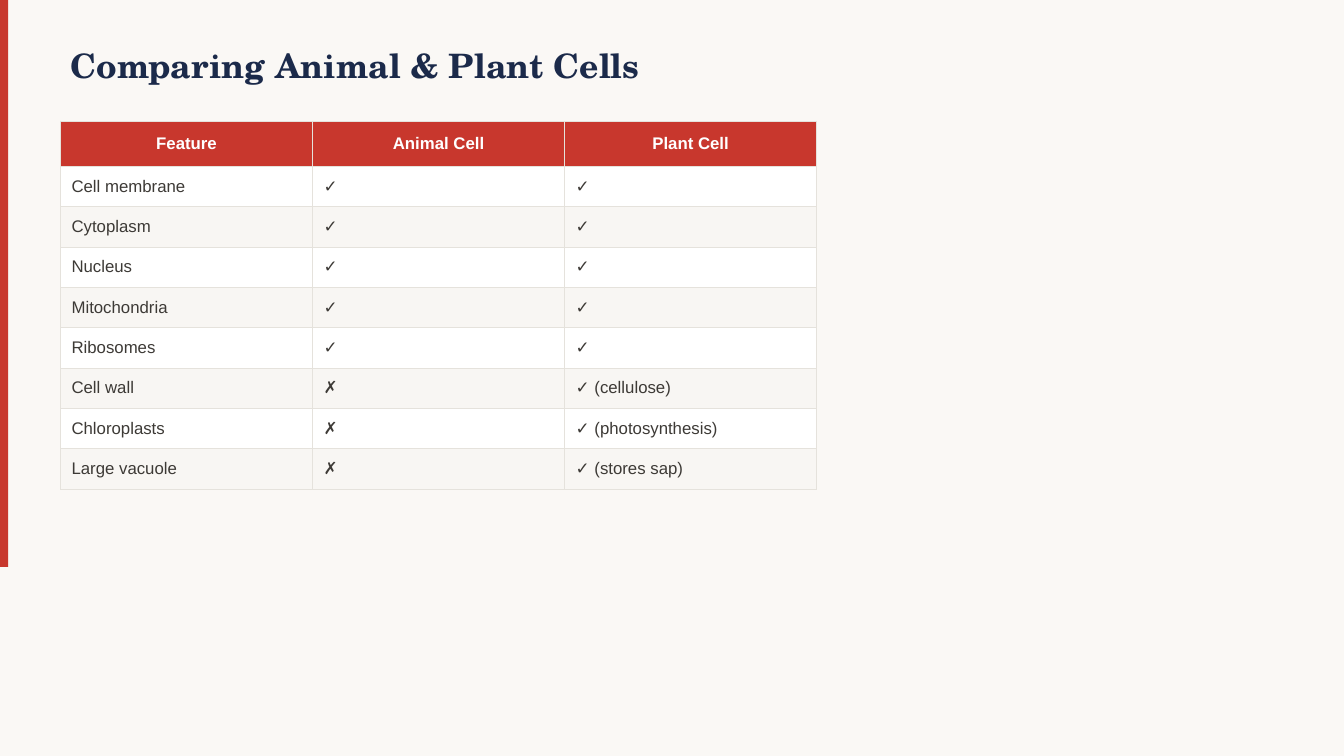
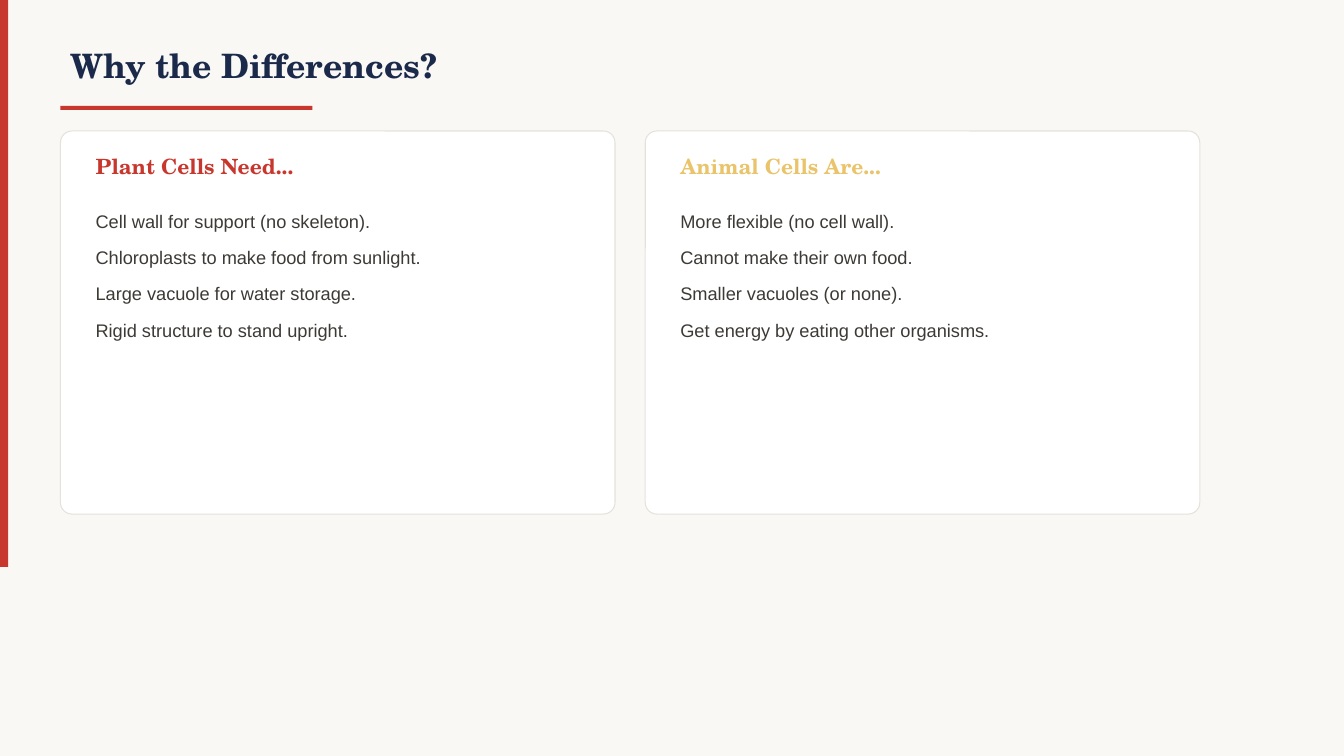
"""Build two slides that compare animal and plant cells."""
from lxml.etree import SubElement
from pptx import Presentation
from pptx.dml.color import RGBColor
from pptx.enum.shapes import MSO_SHAPE
from pptx.enum.text import MSO_ANCHOR, PP_ALIGN
from pptx.oxml.ns import qn
from pptx.util import Inches, Pt

PAPER, RED, NAVY, GOLD = "FAF8F5", "C8372D", "1B2A4A", "E9C46A"
WHITE, STRIPE, BORDER, INK = "FFFFFF", "F8F6F3", "E5E2DC", "3D3A36"
SERIF, SANS = "TeX Gyre Schola", "Arial"
UNIT = Inches(0.05)
MARGIN = 12 * UNIT


def rgb(code):
    return RGBColor.from_string(code)


def write(frame, *lines, size, color=INK, font=SANS, bold=False,
          align=PP_ALIGN.LEFT, anchor=MSO_ANCHOR.MIDDLE, spacing=None, after=None):
    frame.word_wrap = True
    frame.vertical_anchor = anchor
    for index, line in enumerate(lines):
        paragraph = frame.add_paragraph() if index else frame.paragraphs[0]
        paragraph.alignment = align
        paragraph.line_spacing = spacing
        paragraph.space_after = after
        run = paragraph.add_run()
        run.text = line
        run.font.size, run.font.name, run.font.bold = Pt(size), font, bold
        run.font.color.rgb = rgb(color)


deck = Presentation()
deck.slide_width, deck.slide_height = Inches(13.33), Inches(7.5)

slides = []
for title in ("Comparing Animal & Plant Cells", "Why the Differences?"):
    slide = deck.slides.add_slide(deck.slide_layouts[6])
    slide.background.fill.solid()
    slide.background.fill.fore_color.rgb = rgb(PAPER)
    band = slide.shapes.add_shape(MSO_SHAPE.RECTANGLE, 0, 0, Inches(0.08),
                                  int(deck.slide_height * 0.75))
    band.shadow.inherit = False
    band.fill.solid()
    band.fill.fore_color.rgb = rgb(RED)
    band.line.fill.background()
    heading = slide.shapes.add_textbox(MARGIN, 6 * UNIT, 200 * UNIT, 14 * UNIT)
    write(heading.text_frame, title, size=24, color=NAVY, font=SERIF, bold=True)
    slides.append(slide)
comparison, reasons = slides

features = [
    ("Feature", "Animal Cell", "Plant Cell"),
    ("Cell membrane", "✓", "✓"),
    ("Cytoplasm", "✓", "✓"),
    ("Nucleus", "✓", "✓"),
    ("Mitochondria", "✓", "✓"),
    ("Ribosomes", "✓", "✓"),
    ("Cell wall", "✗", "✓ (cellulose)"),
    ("Chloroplasts", "✗", "✓ (photosynthesis)"),
    ("Large vacuole", "✗", "✓ (stores sap)"),
]
heights = [9 * UNIT] + [8 * UNIT] * (len(features) - 1)
grid = comparison.shapes.add_table(len(features), 3, MARGIN, 24 * UNIT,
                                   150 * UNIT, sum(heights)).table
for column in grid.columns:
    column.width = 50 * UNIT
for r, entries in enumerate(features):
    grid.rows[r].height = heights[r]
    if r == 0:
        fill, style = RED, dict(color=WHITE, bold=True, align=PP_ALIGN.CENTER)
    else:
        fill, style = (WHITE if r % 2 else STRIPE), {}
    for c, entry in enumerate(entries):
        cell = grid.cell(r, c)
        cell.margin_left = cell.margin_right = Inches(0.11)
        cell.margin_top = cell.margin_bottom = Inches(0.06)
        cell.vertical_anchor = MSO_ANCHOR.MIDDLE
        write(cell.text_frame, entry, size=12, **style)
        properties = cell._tc.get_or_add_tcPr()
        for side in ("a:lnL", "a:lnR", "a:lnT", "a:lnB"):
            edge = SubElement(properties, qn(side), w=str(Pt(0.5)))
            SubElement(SubElement(edge, qn("a:solidFill")), qn("a:srgbClr"), val=BORDER)
        cell.fill.solid()
        cell.fill.fore_color.rgb = rgb(fill)

underline = reasons.shapes.add_shape(MSO_SHAPE.RECTANGLE, MARGIN, 21 * UNIT,
                                     50 * UNIT, Inches(0.04))
underline.shadow.inherit = False
underline.fill.solid()
underline.fill.fore_color.rgb = rgb(RED)
underline.line.fill.background()

card_width, gap, inset = 110 * UNIT, 6 * UNIT, 5 * UNIT
topics = [
    ("Plant Cells Need...", RED, (
        "Cell wall for support (no skeleton).",
        "Chloroplasts to make food from sunlight.",
        "Large vacuole for water storage.",
        "Rigid structure to stand upright.")),
    ("Animal Cells Are...", GOLD, (
        "More flexible (no cell wall).",
        "Cannot make their own food.",
        "Smaller vacuoles (or none).",
        "Get energy by eating other organisms.")),
]
for position, (topic, accent, points) in enumerate(topics):
    left = MARGIN + position * (card_width + gap)
    card = reasons.shapes.add_shape(MSO_SHAPE.ROUNDED_RECTANGLE, left, 26 * UNIT,
                                    card_width, 76 * UNIT)
    card.adjustments[0] = 0.03
    card.shadow.inherit = False
    card.fill.solid()
    card.fill.fore_color.rgb = rgb(WHITE)
    card.line.color.rgb = rgb(BORDER)
    card.line.width = Pt(0.75)
    inner = left + inset, card_width - 2 * inset
    label = reasons.shapes.add_textbox(inner[0], 29 * UNIT, inner[1], 8 * UNIT)
    write(label.text_frame, topic, size=15, color=accent, font=SERIF, bold=True)
    body = reasons.shapes.add_textbox(inner[0], 39 * UNIT, inner[1], 58 * UNIT)
    write(body.text_frame, *points, size=13, anchor=MSO_ANCHOR.TOP,
          spacing=1.4, after=Pt(4))

deck.save("out.pptx")
